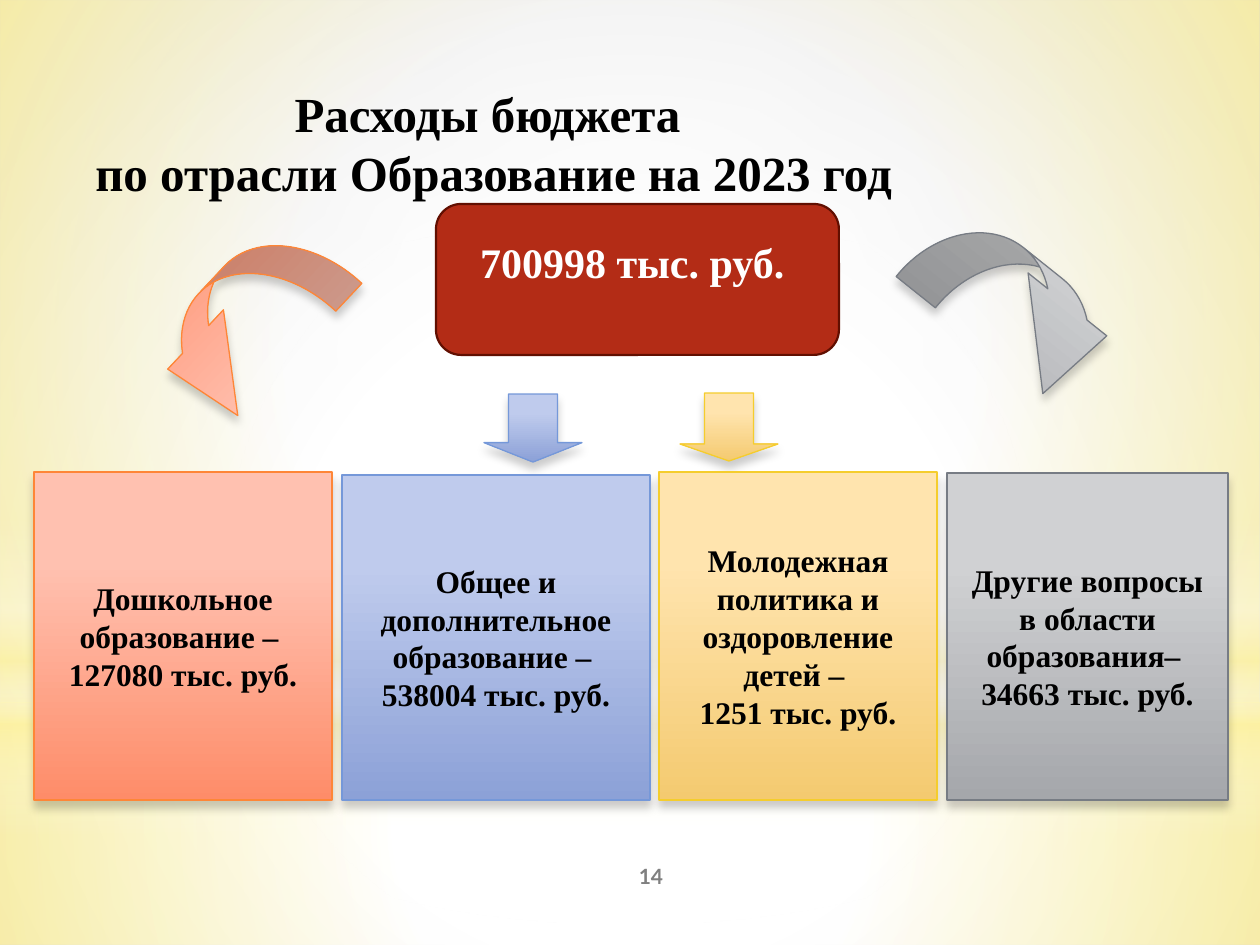
from dataclasses import dataclass
from lxml import etree
from pptx import Presentation, util as u
from pptx.dml.color import RGBColor
from pptx.enum import shapes, text
from pptx.oxml.ns import qn

SCALE = 914400 / 126
W, H = 1260, 945
SHAPE = shapes.MSO_SHAPE
ANCHOR = text.MSO_ANCHOR


@dataclass(frozen=True)
class Theme:
    serif: str = "Times New Roman"
    sans: str = "Lato"
    title: int = 28
    total: int = 24
    body: int = 18
    number: int = 12
    ink: str = "000000"
    white: str = "FFFFFF"
    grey: str = "808080"
    glow: str = "FFF39D"
    shade: str = "D1D1D1"
    total_fill: str = "B32C16"
    total_line: str = "610F01"
    coral: tuple = ("FFC1B0", "FE8C69", "FE8637")
    blue: tuple = ("BFCBED", "8CA1D7", "7598D9")
    amber: tuple = ("FFE4AE", "F4CA70", "F5CD2D")
    steel: tuple = ("D0D1D3", "A5A7AB", "777C84")


T = Theme()


def px(n):
    return u.Emu(round(n * SCALE))


def child(parent, tag, **attrs):
    return etree.SubElement(parent, qn(tag), {k: str(v) for k, v in attrs.items()})


def gradient(owner, fill, stops, focus=None):
    fill.gradient()
    grad = owner.find(".//" + qn("a:gradFill"))
    for old in list(grad):
        grad.remove(old)
    grad.set("rotWithShape", "1")
    gs_list = child(grad, "a:gsLst")
    for pos, color, alpha in stops:
        clr = child(child(gs_list, "a:gs", pos=pos * 1000), "a:srgbClr", val=color)
        if alpha < 100:
            child(clr, "a:alpha", val=alpha * 1000)
    if focus:
        way = child(grad, "a:path", path="circle")
        child(way, "a:fillToRect", **{k: v * 1000 for k, v in zip("ltrb", focus)})
    else:
        child(grad, "a:lin", ang=90 * 60000, scaled=0)


def add_shape(s, kind, box, adj=(), rot=0):
    sp = s.shapes.add_shape(kind, *map(px, box))
    sp.shadow.inherit = False
    sp.rotation = rot
    for i, value in enumerate(adj):
        sp.adjustments[i] = value
    return sp


def add_tinted(s, kind, box, tint, adj=(), rot=0):
    light, dark, edge = tint
    sp = add_shape(s, kind, box, adj, rot)
    gradient(sp.element, sp.fill, [(28, light, 100), (100, dark, 100)])
    sp.line.color.rgb = RGBColor.from_string(edge)
    sp.line.width = u.Pt(0.75)
    effects = sp.element.spPr.find(qn("a:effectLst"))
    shadow = child(effects, "a:outerShdw", blurRad=u.Pt(5), dist=u.Pt(4),
                   dir=90 * 60000, rotWithShape=0)
    child(child(shadow, "a:srgbClr", val=T.ink), "a:alpha", val=20000)
    return sp


def write(sp, paragraphs, size, color, font=T.serif, anchor=ANCHOR.MIDDLE,
          insets=(12, 6, 12, 6)):
    tf = sp.text_frame
    tf.word_wrap = True
    tf.vertical_anchor = anchor
    tf.margin_left, tf.margin_top, tf.margin_right, tf.margin_bottom = map(px, insets)
    for i, lines in enumerate(paragraphs):
        p = tf.paragraphs[0] if i == 0 else tf.add_paragraph()
        p.alignment = text.PP_ALIGN.CENTER
        for j, line in enumerate(lines.split("\n")):
            if j:
                p.add_line_break()
            r = p.add_run()
            r.text = line
            r.font.name = font
            r.font.size = u.Pt(size)
            r.font.bold = True
            r.font.color.rgb = RGBColor.from_string(color)


def backdrop(s, box):
    x, y, w, h = box
    gradient(s.element, s.background.fill,
             [(0, T.white, 100), (42, T.white, 100), (100, T.shade, 100)],
             (24, 44, 24, 12))
    centre = (50, 50, 50, 50)
    layers = [
        (SHAPE.RECTANGLE, 703, 242, centre,
         [(0, T.white, 91), (37, T.white, 76), (100, T.glow, 79)]),
        (SHAPE.RECTANGLE, 0, 703, centre,
         [(0, T.white, 89), (48, T.white, 62), (100, T.glow, 79)]),
        (SHAPE.RECTANGLE, 519, 315, None,
         [(0, T.white, 0), (29, T.white, 30), (45, T.glow, 40),
          (55, T.white, 26), (65, T.glow, 60), (100, T.white, 0)]),
        (SHAPE.OVAL, 220, 703, centre, [(0, T.white, 100), (56, T.white, 0)]),
    ]
    for kind, top, height, focus, stops in layers:
        sp = add_shape(s, kind, (x, y + top, w, height))
        gradient(sp.element, sp.fill, stops, focus)
        sp.line.fill.background()


def label(s, box, line, size, color, font, anchor):
    sp = s.shapes.add_textbox(*map(px, box))
    write(sp, [line], size, color, font, anchor)


def total(s, box):
    sp = add_shape(s, SHAPE.ROUNDED_RECTANGLE, box, [0.167])
    sp.fill.solid()
    sp.fill.fore_color.rgb = RGBColor.from_string(T.total_fill)
    sp.line.color.rgb = RGBColor.from_string(T.total_line)
    sp.line.width = u.Pt(1.25)
    write(sp, ["700998 тыс. руб. "], T.total, T.white, insets=(18, 6, 18, 42))


def arrows(s, box):
    x, y = box[:2]
    for kind, dx, dy, w, h, tint, adj, rot in [
        (SHAPE.CURVED_UP_ARROW, 0, 10, 222, 112, T.coral, (0.34, 0.727, 0.74), 133.2),
        (SHAPE.CURVED_DOWN_ARROW, 768, 0, 238, 102, T.steel, (0.492, 0.987, 0.834), 38.6),
        (SHAPE.DOWN_ARROW, 546, 133, 98, 68, T.amber, (0.5, 0.25), 0),
        (SHAPE.DOWN_ARROW, 350, 134, 98, 68, T.blue, (0.5, 0.285), 0),
    ]:
        add_tinted(s, kind, (x + dx, y + dy, w, h), tint, adj, rot)


def sectors(s, box):
    x, y, _, h = box
    for dx, dy, w, tint, paragraphs in [
        (0, 0, 298, T.coral, ["Дошкольное образование – ", "127080 тыс. руб."]),
        (308, 3, 308, T.blue,
         ["Общее и дополнительное", "образование – \n538004 тыс. руб."]),
        (625, 0, 278, T.amber,
         ["Молодежная политика и оздоровление детей – ", "1251 тыс. руб."]),
        (913, 1, 281, T.steel,
         ["Другие вопросы в области образования– ", "34663 тыс. руб."]),
    ]:
        sp = add_tinted(s, SHAPE.RECTANGLE, (x + dx, y + dy, w, h - dy), tint)
        write(sp, paragraphs, T.body, T.ink, insets=(15, 0, 15, 0))


def main():
    prs = Presentation()
    prs.slide_width, prs.slide_height = px(W), px(H)
    s = prs.slides.add_slide(prs.slide_layouts[6])
    backdrop(s, (0, 0, W, H))
    total(s, (436, 204, 403, 151))
    arrows(s, (134, 260, 1006, 202))
    sectors(s, (34, 472, 1194, 328))
    label(s, (525, 851, 252, 50), "14", T.number, T.grey, T.sans, ANCHOR.MIDDLE)
    label(s, (69, 76, 849, 131), "Расходы бюджета \nпо отрасли Образование на 2023 год",
          T.title, T.ink, T.serif, ANCHOR.BOTTOM)
    prs.save("out.pptx")


if __name__ == "__main__":
    main()
